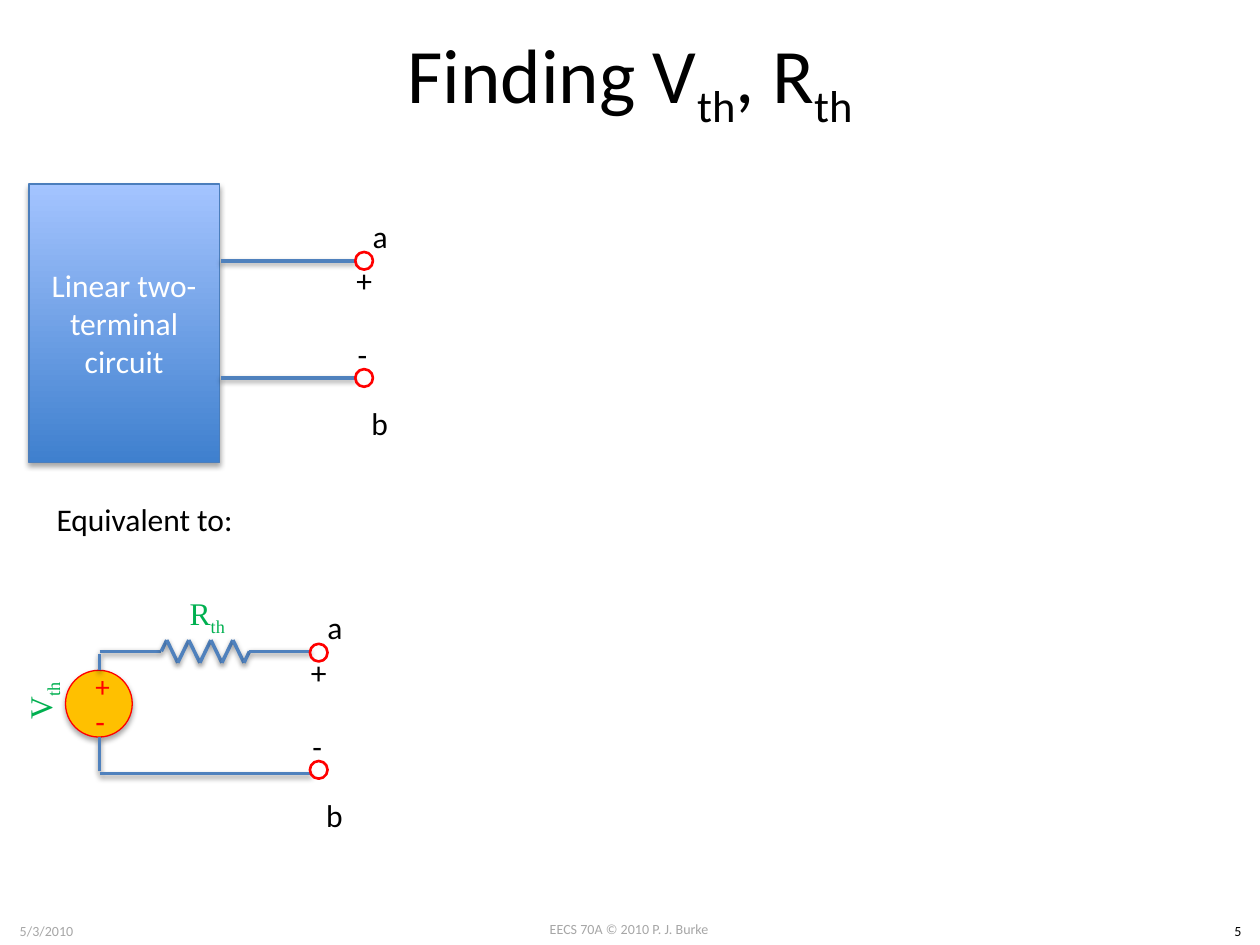
import itertools

import lxml.etree
import pptx
import pptx.dml.color
import pptx.enum.shapes
import pptx.enum.text
import pptx.oxml.ns
import pptx.util

COLUMNS, ROWS = 100, 75
CELL = pptx.util.Inches(0.1)
COLORS = {
    "text": "000000", "muted": "A6A6A6", "light": "FFFFFF", "label": "00B050",
    "wire": "4F81BD", "box_line": "4B7EBC", "box_bottom": "3F80CE",
    "box_top": "A4C4FF", "terminal": "FF0000", "source": "FFC000",
}
TERMINAL_SIZE = 1.4
TERMINAL_GAP = 9.3
WIRE_X = 7.9
RESISTOR_Y = 51.7
RESISTOR_LEFT, RESISTOR_RIGHT = 12.8, 19.8
PEAKS = 8


def cells(*values):
    """Convert grid cells to slide lengths."""
    return [round(value * CELL) for value in values]


def color(name):
    """Return the named palette colour."""
    return pptx.dml.color.RGBColor.from_string(COLORS[name])


def write(shape, text, size=18, font="Calibri", fill="text", align="LEFT",
          anchor="TOP", wrap=False):
    """Write text whose parts between bars alternate normal and subscript."""
    frame = shape.text_frame
    frame.word_wrap = wrap
    frame.vertical_anchor = pptx.enum.text.MSO_ANCHOR[anchor]
    paragraph = frame.paragraphs[0]
    paragraph.alignment = pptx.enum.text.PP_ALIGN[align]
    for index, part in enumerate(text.split("|")):
        if not part:
            continue
        run = paragraph.add_run()
        run.text = part
        run.font.size = pptx.util.Pt(size)
        run.font.name = font
        run.font.color.rgb = color(fill)
        if index % 2:
            run.font._element.set("baseline", "-25000")


def add_label(shapes, text, box, rotation=0, **style):
    """Add a text box on the grid."""
    label = shapes.add_textbox(*cells(*box))
    label.rotation = rotation
    write(label, text, **style)
    return label


def add_shadow(shape, distance, opacity):
    """Give a shape or connector a soft shadow falling downwards."""
    properties = shape._element.spPr
    tag = pptx.oxml.ns.qn
    effects = properties.find(tag("a:effectLst"))
    if effects is None:
        effects = lxml.etree.SubElement(properties, tag("a:effectLst"))
    shadow = lxml.etree.SubElement(
        effects, tag("a:outerShdw"), blurRad=str(pptx.util.Pt(3.1)),
        dist=str(pptx.util.Pt(distance)), dir="5400000", rotWithShape="0")
    tint = lxml.etree.SubElement(shadow, tag("a:srgbClr"), val="000000")
    lxml.etree.SubElement(tint, tag("a:alpha"), val=str(opacity * 1000))


def add_wire(shapes, start, end):
    """Add a straight wire between two grid points."""
    wire = shapes.add_connector(
        pptx.enum.shapes.MSO_CONNECTOR.STRAIGHT, *cells(*start, *end))
    wire.line.color.rgb = color("wire")
    wire.line.width = pptx.util.Pt(2)
    add_shadow(wire, 1.6, 38)


def add_outline(shapes, kind, box, line, width):
    """Add an unfilled preset shape with a coloured outline."""
    shape = shapes.add_shape(pptx.enum.shapes.MSO_SHAPE[kind], *cells(*box))
    shape.shadow.inherit = False
    shape.fill.background()
    shape.line.color.rgb = color(line)
    shape.line.width = pptx.util.Pt(width)
    return shape


def add_terminals(shapes, left, top):
    """Add the terminals a and b with their polarity signs."""
    for row in (top, top + TERMINAL_GAP):
        add_outline(shapes, "OVAL", (left, row, TERMINAL_SIZE, TERMINAL_SIZE),
                    "terminal", 1.5)
    for text, across, down, width in (
            ("a", 0.4, -3.3, 3.2), ("b", 0.3, 11.6, 3.4),
            ("+", -0.9, 0.2, 3.3), ("-", -0.8, 6.1, 2.8)):
        add_label(shapes, text, (left + across, top + down, width, 4))


def add_circuit_box(shapes):
    """Add the two-terminal circuit with its leads."""
    box = add_outline(shapes, "RECTANGLE", (2.3, 14.6, 15.1, 22.1),
                      "box_line", 0.75)
    box.fill.gradient()
    box.fill.gradient_angle = 90
    for stop, name in zip(box.fill.gradient_stops, ("box_bottom", "box_top")):
        stop.color.rgb = color(name)
    add_shadow(box, 1.8, 35)
    write(box, "Linear two-terminal circuit", fill="light", align="CENTER",
          anchor="MIDDLE", wrap=True)
    for row in (20.7, 20.7 + TERMINAL_GAP):
        add_wire(shapes, (17.5, row), (28.2, row))


def add_resistor(shapes):
    """Add the labelled zigzag resistor with its leads."""
    group = shapes.add_group_shape().shapes
    add_label(group, "R|th", (10.5, 45.2, 11.9, 7.3), font="Times New Roman",
              fill="label", align="CENTER", anchor="MIDDLE")
    step = (RESISTOR_RIGHT - RESISTOR_LEFT) / PEAKS
    zigzag = [(RESISTOR_LEFT + (index + 0.5) * step,
               RESISTOR_Y + (0.9 if index % 2 else -0.9))
              for index in range(PEAKS)]
    points = [(WIRE_X, RESISTOR_Y), (RESISTOR_LEFT, RESISTOR_Y), *zigzag,
              (RESISTOR_RIGHT, RESISTOR_Y), (24.7, RESISTOR_Y)]
    for start, end in itertools.pairwise(points):
        add_wire(group, start, end)


def add_source(shapes):
    """Add the voltage source with its label and wires."""
    group = shapes.add_group_shape().shapes
    circle = add_outline(group, "OVAL", (5.2, 53.2, 5.3, 5.3), "terminal", 0.75)
    circle.fill.solid()
    circle.fill.fore_color.rgb = color("source")
    add_shadow(circle, 1.8, 35)
    for sign, top, size in (("+", 52.8, 16.6), ("-", 55.6, 18)):
        add_label(group, sign, (6.6, top, 2.6, 3.3), size=size,
                  fill="terminal", align="CENTER", anchor="MIDDLE")
    add_label(shapes, "V|th", (-2.6, 52, 11.9, 7.3), rotation=270,
              font="Times New Roman", fill="label", align="CENTER",
              anchor="MIDDLE")
    add_wire(shapes, (WIRE_X, 61.2), (WIRE_X, 58.5))
    add_wire(shapes, (WIRE_X, 53.2), (WIRE_X, 51.9))
    add_wire(shapes, (WIRE_X, 61.4), (24.7, 61.4))


def main():
    """Build and save the slide."""
    presentation = pptx.Presentation()
    presentation.slide_width, presentation.slide_height = cells(COLUMNS, ROWS)
    slide = presentation.slides.add_slide(presentation.slide_layouts[5])
    shapes = slide.shapes
    title = shapes.title
    title.left, title.top, title.width, title.height = cells(5, 0, 90, 12.5)
    write(title, "Finding V|th|, R|th", size=44, align="CENTER",
          anchor="MIDDLE", wrap=True)
    for text, box, fill in (
            ("EECS 70A © 2010 P. J. Burke", (38.3, 72.6, 23.3, 2.4), "muted"),
            ("5/3/2010", (0, 72.7, 7.4, 2.4), "muted"),
            ("5", (96.5, 72.7, 3.5, 2.4), "text")):
        add_label(shapes, text, box, size=8, fill=fill, align="CENTER")
    add_circuit_box(shapes)
    add_terminals(shapes, 28.2, 20)
    add_label(shapes, "Equivalent to:", (3.5, 39.2, 16.2, 4))
    add_resistor(shapes)
    add_source(shapes)
    add_terminals(shapes, 24.6, 51.1)
    presentation.save("out.pptx")


if __name__ == "__main__":
    main()
